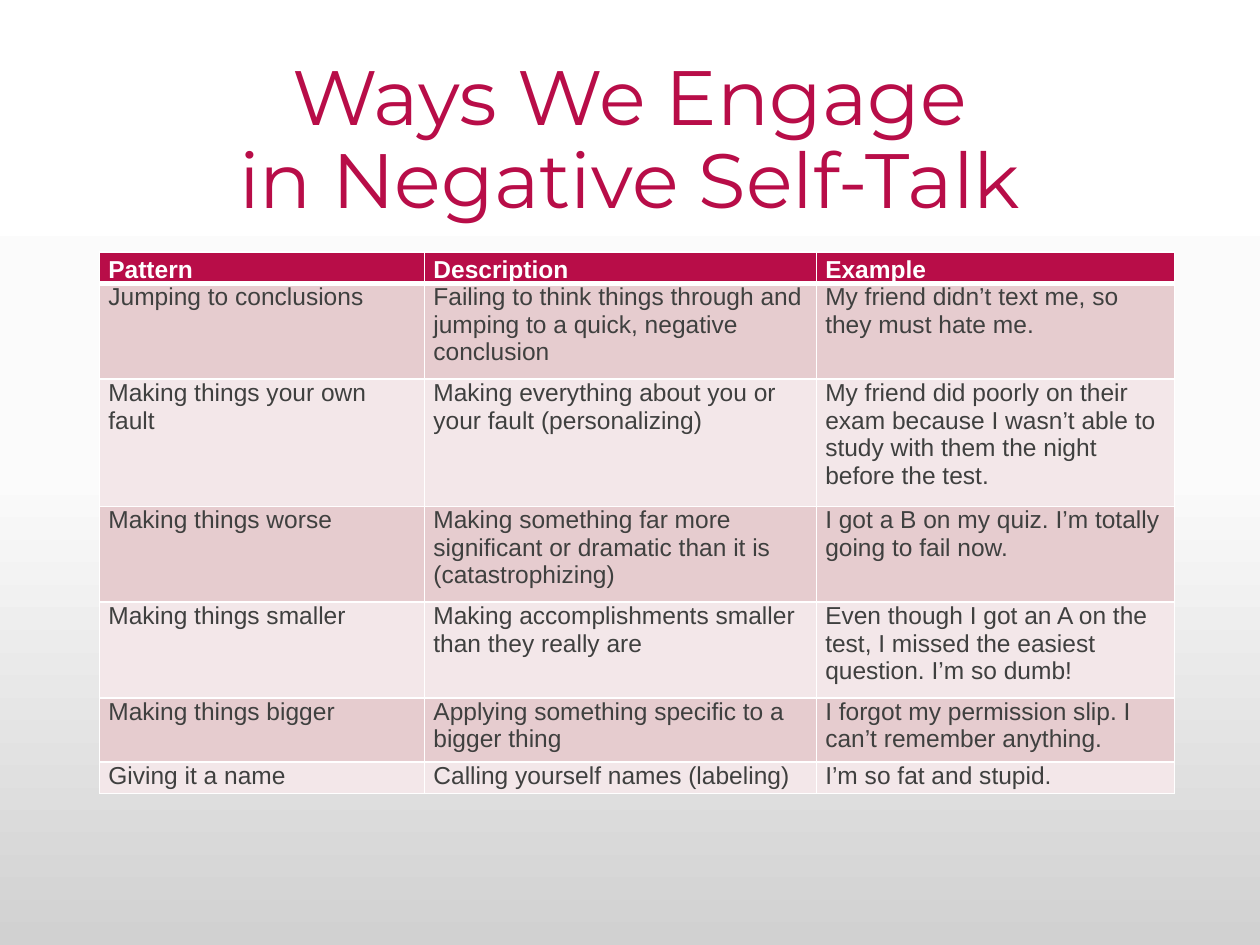
from copy import deepcopy
from lxml.etree import SubElement
from pptx import Presentation
from pptx.dml.color import RGBColor as RGB
from pptx.enum.text import MSO_ANCHOR as ANCHOR, MSO_AUTO_SIZE as AUTOSIZE, PP_ALIGN as ALIGN
from pptx.oxml.ns import qn
from pptx.util import Inches, Pt

COLORS = {"accent": "B80D48", "text": "3F403F", "line": "FFFFFF",
          "band_dark": "E6CCCF", "band_light": "F3E7E9"}
BACKGROUND = [(0, "FFFFFF"), (0.5, "FBFBFB"), (1, "D1D1D1")]
COLUMNS = [2.58, 3.11, 2.84]
LINE_HEIGHT = 0.25
ROWS = [  # height in lines, then pattern, description, example
    (1, "Pattern", "Description", "Example"),
    (3, "Jumping to conclusions",
     "Failing to think things through and jumping to a quick, negative conclusion",
     "My friend didn’t text me, so they must hate me."),
    (4, "Making things your own fault",
     "Making everything about you or your fault (personalizing)",
     "My friend did poorly on their exam because I wasn’t able to study with them "
     "the night before the test."),
    (3, "Making things worse",
     "Making something far more significant or dramatic than it is (catastrophizing)",
     "I got a B on my quiz. I’m totally going to fail now."),
    (3, "Making things smaller",
     "Making accomplishments smaller than they really are",
     "Even though I got an A on the test, I missed the easiest question. I’m so dumb!"),
    (2, "Making things bigger",
     "Applying something specific to a bigger thing",
     "I forgot my permission slip. I can’t remember anything."),
    (1, "Giving it a name", "Calling yourself names (labeling)", "I’m so fat and stupid."),
]


def style(p, color, **formats):
    for r in p.runs:
        r.font.color.rgb = RGB.from_string(COLORS[color])
        for name, value in formats.items():
            setattr(r.font, name, value)


def add_border(cell, side, width):
    ln = SubElement(cell._tc.get_or_add_tcPr(), qn(f"a:ln{side}"), w=str(Pt(width)))
    fill = SubElement(ln, qn("a:solidFill"))
    SubElement(fill, qn("a:srgbClr"), val=COLORS["line"])


prs = Presentation()
prs.slide_width, prs.slide_height = Inches(10), Inches(7.5)
s = prs.slides.add_slide(prs.slide_layouts[5])

# Background gradient, top to bottom
fill = s.background.fill
fill.gradient()
fill.gradient_angle = 270
stop_list = s.element.find(".//" + qn("a:gsLst"))
stop_list.append(deepcopy(stop_list[-1]))
for stop, (position, color) in zip(fill.gradient_stops, BACKGROUND):
    stop.position = position
    stop.color.rgb = RGB.from_string(color)

# Title
title = s.shapes.title
box = {"left": 0.69, "top": 0.4, "width": 8.62, "height": 1.45}
for name, value in box.items():
    setattr(title, name, Inches(value))
tf = title.text_frame
tf.auto_size, tf.vertical_anchor, tf.word_wrap = AUTOSIZE.NONE, ANCHOR.MIDDLE, True
p = tf.paragraphs[0]
p.text = "Ways We Engage\vin Negative Self-Talk"
p.alignment, p.line_spacing = ALIGN.CENTER, 0.9
style(p, "accent", size=Pt(44), name="Montserrat")

# Table of patterns
lines = sum(row[0] for row in ROWS)
table = s.shapes.add_table(len(ROWS), len(COLUMNS), Inches(0.79), Inches(2),
                           Inches(sum(COLUMNS)), Inches(lines * LINE_HEIGHT)).table
for column, width in zip(table.columns, COLUMNS):
    column.width = Inches(width)

cell_format = {"margin_left": Inches(0.07), "margin_right": Inches(0.07),
               "margin_top": 0, "margin_bottom": 0}
for i, (height, *texts) in enumerate(ROWS):
    header = i == 0
    table.rows[i].height = Inches(height * LINE_HEIGHT + (0.01 if height > 1 else 0))
    band = "accent" if header else ("band_light", "band_dark")[i % 2]
    widths = {"L": 1, "R": 1, "T": 3 if i == 1 else 1, "B": 3 if header else 1}
    for j, text in enumerate(texts):
        cell = table.cell(i, j)
        for name, value in cell_format.items():
            setattr(cell, name, value)
        cell.vertical_anchor = ANCHOR.BOTTOM if header else ANCHOR.TOP
        for side, width in widths.items():
            add_border(cell, side, width)
        cell.fill.solid()
        cell.fill.fore_color.rgb = RGB.from_string(COLORS[band])
        cell.text = text
        style(cell.text_frame.paragraphs[0], "line" if header else "text",
              size=Pt(14), name="Arial", bold=header)

prs.save("out.pptx")
